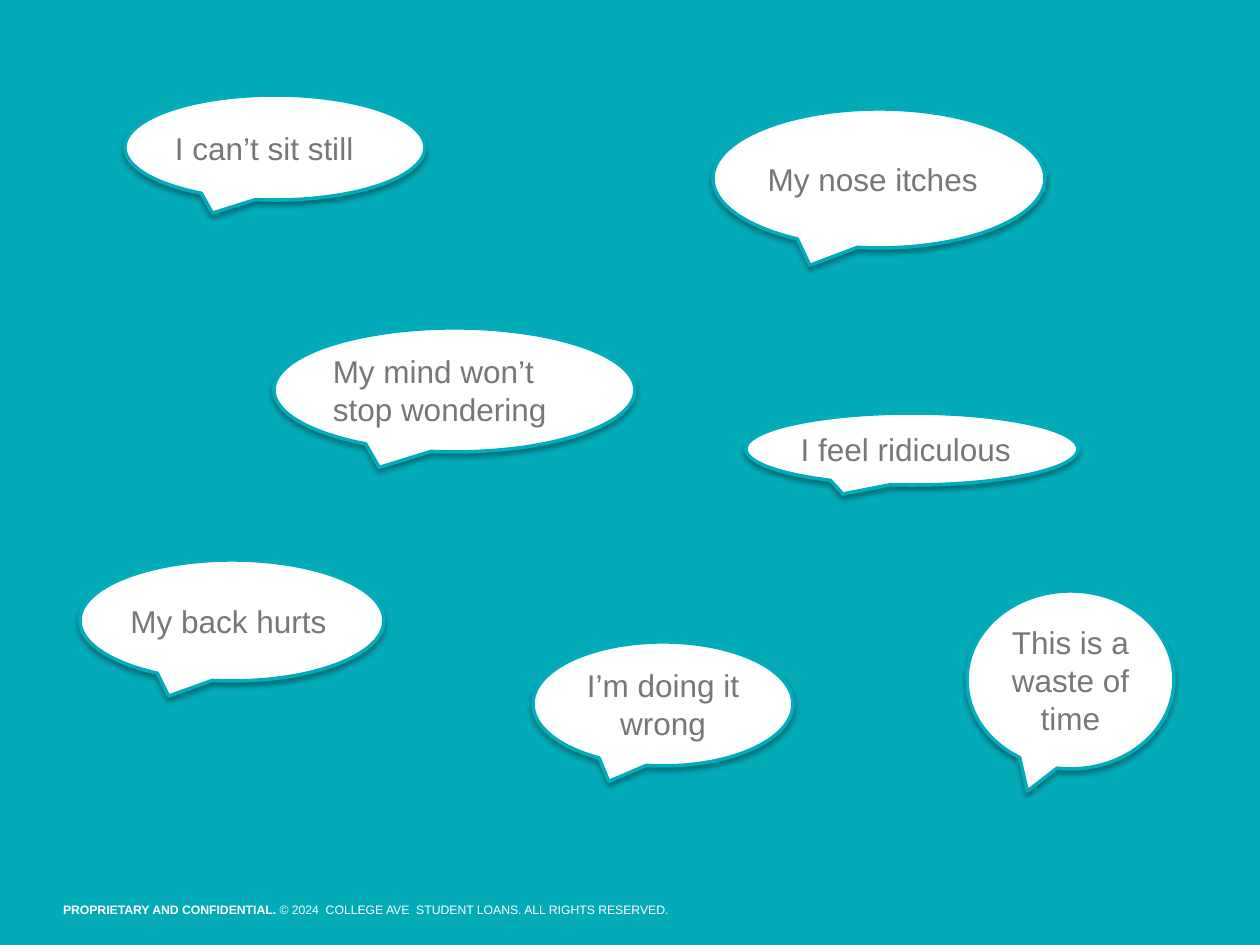
import lxml.etree
import pptx
import pptx.dml.color
import pptx.enum.shapes
import pptx.enum.text
import pptx.oxml.ns
import pptx.util

EMU_PER_PX = 914400 / 126
SHAPES = pptx.enum.shapes.MSO_SHAPE
ALIGN = pptx.enum.text.PP_ALIGN
TEAL, OUTLINE, WHITE, GRAY = "03AAB8", "00ADBC", "FFFFFF", "76777B"

BUBBLES = [
    ("I can’t sit still", 125, 95, 300, 105, ALIGN.LEFT),
    ("My nose itches", 713, 109, 332, 139, ALIGN.LEFT),
    ("My mind won’t stop wondering", 274, 328, 361, 124, ALIGN.LEFT),
    ("My back hurts", 80, 560, 304, 121, ALIGN.LEFT),
    ("I’m doing it wrong", 533, 642, 260, 124, ALIGN.CENTER),
    ("This is a waste of time", 967, 591, 207, 178, ALIGN.CENTER),
    ("I feel ridiculous", 746, 413, 332, 72, ALIGN.LEFT),
]


def px(length):
    """Turn pixels into EMU."""
    return pptx.util.Emu(round(length * EMU_PER_PX))


def color(value):
    """Turn a hex string into a colour."""
    return pptx.dml.color.RGBColor.from_string(value)


def style_run(run, size, value, bold=False):
    """Set the font of one run."""
    run.font.name = "Arial"
    run.font.size = pptx.util.Pt(size)
    run.font.bold = bold
    run.font.color.rgb = color(value)


def prepare_frame(shape):
    """Set wrapping, fitting and margins, and return the text frame."""
    frame = shape.text_frame
    frame.word_wrap = True
    frame.auto_size = pptx.enum.text.MSO_AUTO_SIZE.SHAPE_TO_FIT_TEXT
    frame.margin_left = frame.margin_right = px(6)
    frame.margin_top = frame.margin_bottom = px(6)
    return frame


def add_soft_shadow(shape):
    """Give a shape a soft shadow that falls straight down."""
    shape.shadow.inherit = False
    effects = shape._element.spPr.find(pptx.oxml.ns.qn("a:effectLst"))
    shadow = lxml.etree.SubElement(
        effects, pptx.oxml.ns.qn("a:outerShdw"), blurRad=str(pptx.util.Pt(3)),
        dist=str(pptx.util.Pt(1.8)), dir="5400000", rotWithShape="0")
    black = lxml.etree.SubElement(shadow, pptx.oxml.ns.qn("a:srgbClr"), val="000000")
    lxml.etree.SubElement(black, pptx.oxml.ns.qn("a:alpha"), val="35000")


def add_filled_shape(slide, kind, left, top, width, height, fill):
    """Add a filled preset shape with a soft shadow."""
    shape = slide.shapes.add_shape(kind, px(left), px(top), px(width), px(height))
    shape.fill.solid()
    shape.fill.fore_color.rgb = color(fill)
    add_soft_shadow(shape)
    return shape


def add_backdrop(slide):
    """Cover the slide with teal."""
    backdrop = add_filled_shape(slide, SHAPES.RECTANGLE, 0, 0, 1260, 945, TEAL)
    backdrop.line.fill.background()


def add_bubble(slide, text, left, top, width, height, alignment):
    """Add one speech bubble."""
    bubble = add_filled_shape(slide, SHAPES.OVAL_CALLOUT, left, top, width, height, WHITE)
    bubble.line.color.rgb = color(OUTLINE)
    bubble.line.width = pptx.util.Pt(2)
    frame = prepare_frame(bubble)
    frame.vertical_anchor = pptx.enum.text.MSO_ANCHOR.MIDDLE
    frame.text = text
    paragraph = frame.paragraphs[0]
    paragraph.alignment = alignment
    style_run(paragraph.runs[0], 18, GRAY)


def add_footer(slide):
    """Add the confidentiality and copyright line."""
    box = slide.shapes.add_textbox(px(57), px(893), px(803), px(29))
    paragraph = prepare_frame(box).paragraphs[0]
    paragraph.line_spacing = 1.2
    for text, bold in (
        ("PROPRIETARY AND CONFIDENTIAL. ", True),
        ("© 2024  COLLEGE AVE  STUDENT LOANS. ALL RIGHTS RESERVED.", False),
    ):
        run = paragraph.add_run()
        run.text = text
        style_run(run, 7, WHITE, bold)


def main():
    """Build and save the slide."""
    presentation = pptx.Presentation()
    presentation.slide_width = px(1260)
    presentation.slide_height = px(945)
    slide = presentation.slides.add_slide(presentation.slide_layouts[6])
    add_backdrop(slide)
    add_footer(slide)
    for bubble in BUBBLES:
        add_bubble(slide, *bubble)
    presentation.save("out.pptx")


if __name__ == "__main__":
    main()
